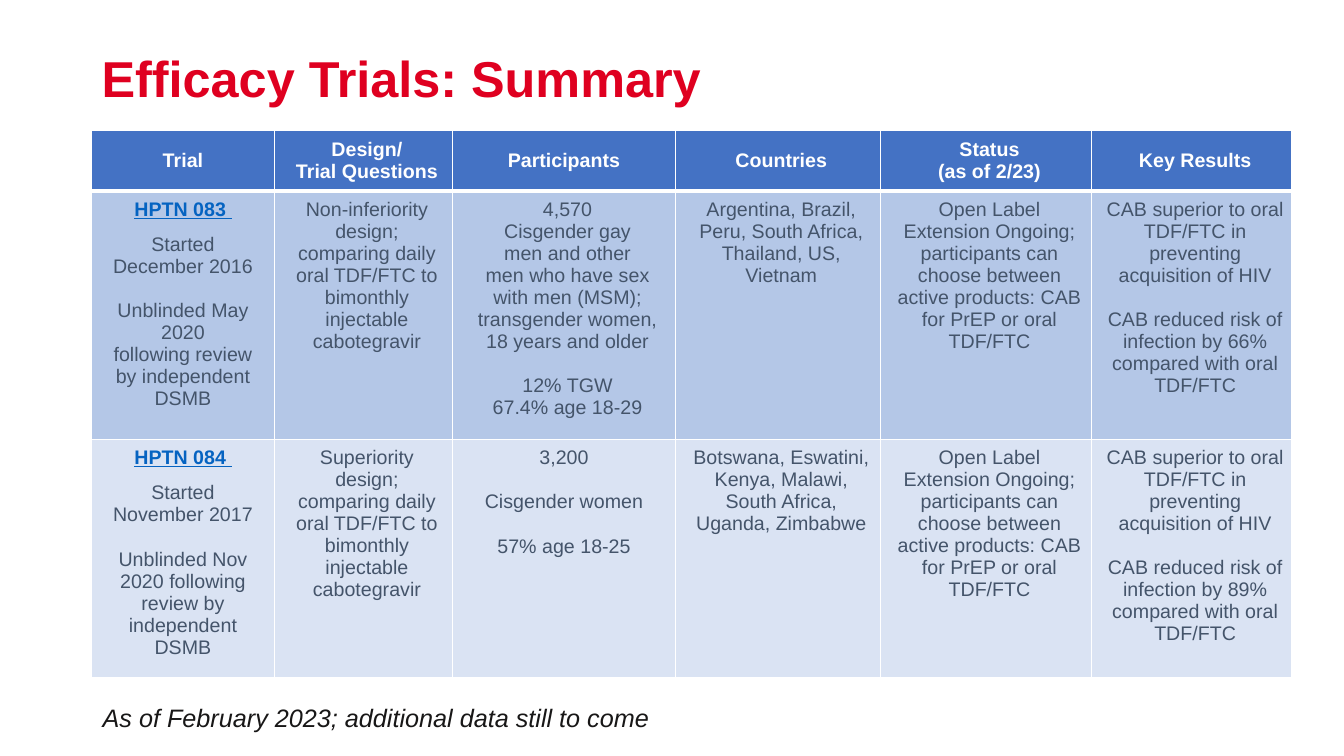
import pptx
import pptx.dml.color
import pptx.enum.text
import pptx.oxml.ns
import pptx.util
from lxml import etree

Inches, Pt = pptx.util.Inches, pptx.util.Pt
RGBColor = pptx.dml.color.RGBColor
Align, Anchor = pptx.enum.text.PP_ALIGN, pptx.enum.text.MSO_ANCHOR
qn = pptx.oxml.ns.qn

RED = RGBColor(0xDF, 0x00, 0x20)
BLACK = RGBColor(0x18, 0x17, 0x17)
WHITE = RGBColor(0xFF, 0xFF, 0xFF)
SLATE = RGBColor(0x44, 0x54, 0x6A)
LINK_BLUE = RGBColor(0x05, 0x63, 0xC1)
ROW_FILLS = [RGBColor(0x44, 0x72, 0xC4), RGBColor(0xB4, 0xC7, 0xE7), RGBColor(0xDA, 0xE3, 0xF3)]

LEFT, WIDTH = 0.91, 11.9
COLUMN_WIDTHS = [1.81, 1.77, 2.21, 2.03, 2.1, 1.98]
ROW_HEIGHTS = [0.6, 2.33, 2.23]
PADDING = Inches(0.07)
TRIAL, PARTICIPANTS = 0, 2
NAME_GAP, BLOCK_GAP = 9.5, 16

# Each cell lists its paragraphs; a pair gives the space before and the text.
DESIGN = ["comparing daily oral TDF/FTC to bimonthly", "injectable cabotegravir"]
STATUS = ["Open Label Extension Ongoing; participants can choose between "
          "active products: CAB for PrEP or oral TDF/FTC"]
SUPERIOR = "CAB superior to oral TDF/FTC in preventing acquisition of HIV"
REDUCED = "CAB reduced risk of infection by {} compared with oral TDF/FTC"
ROWS = [
    [["Trial"], ["Design/", "Trial Questions"], ["Participants"], ["Countries"],
     ["Status", "(as of 2/23)"], ["Key Results"]],
    [["HPTN 083 ", (NAME_GAP, "Started"), "December 2016",
      (BLOCK_GAP, "Unblinded May 2020"), "following review\nby independent DSMB"],
     ["Non-inferiority\ndesign;"] + DESIGN,
     ["4,570", "Cisgender gay", "men and other",
      "men who have sex with men (MSM); transgender women, 18 years and older",
      (BLOCK_GAP, "12% TGW"), "67.4% age 18-29"],
     ["Argentina, Brazil,", "Peru, South Africa, Thailand, US, Vietnam"],
     STATUS,
     [SUPERIOR, (BLOCK_GAP, REDUCED.format("66%"))]],
    [["HPTN 084 ", (NAME_GAP, "Started"), "November 2017",
      (BLOCK_GAP, "Unblinded Nov 2020 following review by independent DSMB")],
     ["Superiority\ndesign;"] + DESIGN,
     ["3,200", (BLOCK_GAP, "Cisgender women"), (BLOCK_GAP, "57% age 18-25")],
     ["Botswana, Eswatini, Kenya, Malawi, South Africa, Uganda, Zimbabwe"],
     STATUS,
     [SUPERIOR, (BLOCK_GAP, REDUCED.format("89%"))]],
]


def add_span(para, text, size, color, bold=False, italic=False):
    """Add one Arial run to a paragraph and return it."""
    span = para.add_run()
    span.text = text
    span.font.name = "Arial"
    span.font.size = Pt(size)
    span.font.color.rgb = color
    span.font.bold = bold
    span.font.italic = italic
    return span


def add_borders(cell, bottom_width):
    """Draw white lines on all four sides of a table cell."""
    properties = cell._tc.get_or_add_tcPr()
    for place, side in enumerate(["lnL", "lnR", "lnT", "lnB"]):
        width = bottom_width if side == "lnB" else 1
        line = etree.Element(qn("a:" + side), w=str(Pt(width)))
        fill = etree.SubElement(line, qn("a:solidFill"))
        etree.SubElement(fill, qn("a:srgbClr"), val=str(WHITE))
        properties.insert(place, line)


deck = pptx.Presentation()
deck.slide_width, deck.slide_height = Inches(13.33), Inches(7.5)
page = deck.slides.add_slide(deck.slide_layouts[6])

title = page.shapes.add_textbox(Inches(LEFT), Inches(0.4), Inches(WIDTH), Inches(0.82))
title.text_frame.word_wrap = True
title.text_frame.vertical_anchor = Anchor.MIDDLE
para = title.text_frame.paragraphs[0]
para.line_spacing = 0.9
add_span(para, "Efficacy Trials: Summary", 36, RED, bold=True)

table = page.shapes.add_table(
    len(ROW_HEIGHTS), len(COLUMN_WIDTHS), Inches(LEFT), Inches(1.29),
    Inches(WIDTH), Inches(sum(ROW_HEIGHTS))).table
for column, width in zip(table.columns, COLUMN_WIDTHS):
    column.width = Inches(width)
for row, height in zip(table.rows, ROW_HEIGHTS):
    row.height = Inches(height)

for r, row in enumerate(ROWS):
    header = r == 0
    for c, paragraphs in enumerate(row):
        cell = table.cell(r, c)
        cell.margin_left = cell.margin_right = PADDING
        cell.margin_top = cell.margin_bottom = PADDING
        cell.vertical_anchor = Anchor.MIDDLE if header else Anchor.TOP
        cell.fill.solid()
        cell.fill.fore_color.rgb = ROW_FILLS[r]
        add_borders(cell, 3 if header else 1)
        indented = c not in (TRIAL, PARTICIPANTS) or (r, c) == (1, PARTICIPANTS)
        for i, item in enumerate(paragraphs):
            gap, text = item if isinstance(item, tuple) else (0, item)
            para = cell.text_frame.paragraphs[0] if i == 0 else cell.text_frame.add_paragraph()
            para.alignment = Align.CENTER
            if gap:
                para.space_before = Pt(gap)
            if indented:
                para._p.get_or_add_pPr().set("marL", str(PADDING))
            trial_name = not header and c == TRIAL and i == 0
            color = WHITE if header else LINK_BLUE if trial_name else SLATE
            for n, part in enumerate(text.split("\n")):
                if n:
                    para.add_line_break()
                span = add_span(para, part, 14, color, bold=header or trial_name)
                span.font.underline = trial_name

note = page.shapes.add_textbox(Inches(0.92), Inches(6.92), Inches(8.22), Inches(0.4))
note.text_frame.word_wrap = True
add_span(note.text_frame.paragraphs[0], "As of February 2023; additional data still to come",
         18, BLACK, italic=True)

deck.save("out.pptx")
